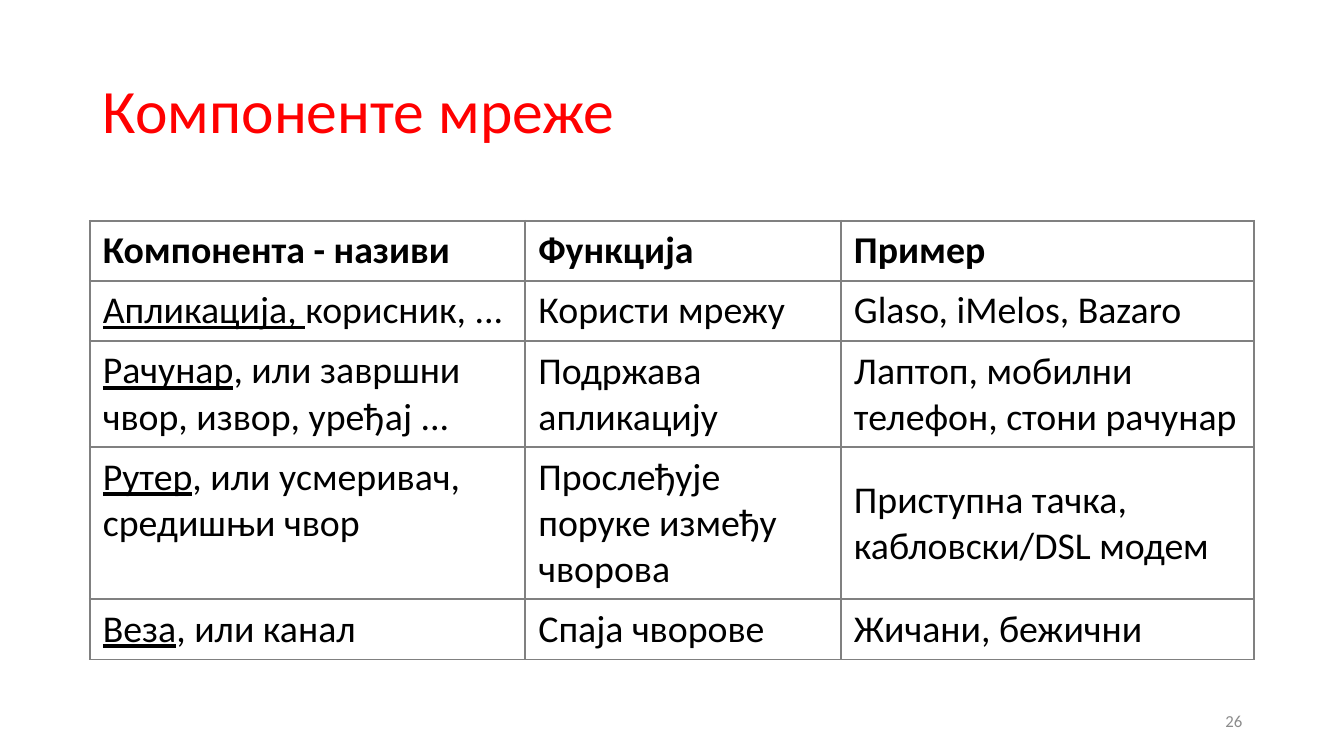
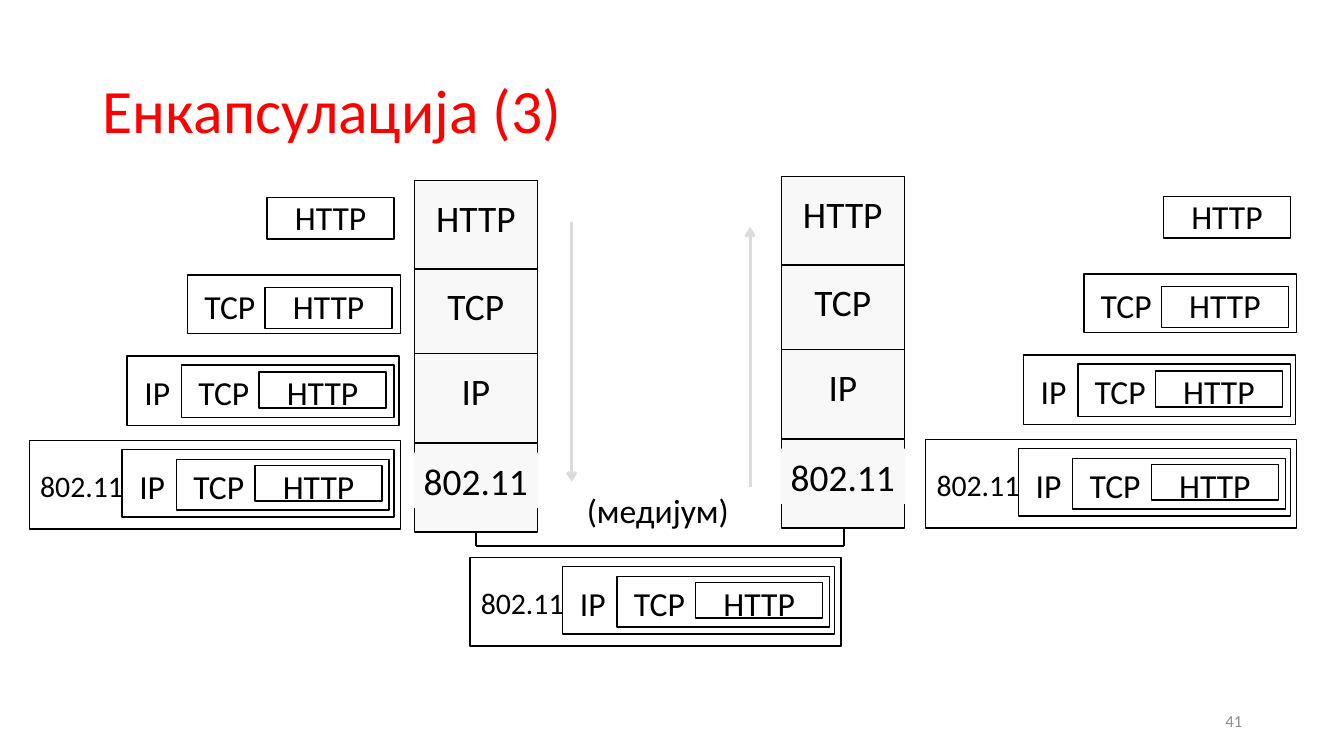
from itertools import pairwise

from lxml.etree import SubElement
from pptx import Presentation
from pptx.dml.color import RGBColor
from pptx.enum.shapes import MSO_CONNECTOR, MSO_SHAPE
from pptx.enum.text import MSO_ANCHOR, MSO_AUTO_SIZE, PP_ALIGN
from pptx.oxml.ns import qn
from pptx.util import Inches, Pt

FONT = "Calibri"
RED, BLACK, GREY = "FF0000", "000000", "8C8C8C"
BORDER, PALE, ARROW = "808080", "F8F8F8", "DBDBDB"

TABLE_TITLE, TABLE_NUMBER = "Компоненте мреже", "26"
COLUMN_WIDTHS = (4.32, 3.13, 4.1)
ROW_HEIGHTS = (0.59, 0.59, 1.05, 1.5, 0.59)
ROWS = [
    (("", "Компонента - називи"), "Функција", "Пример"),
    (("Апликација, ", "корисник, ..."), "Користи мрежу", "Glaso, iMelos, Bazaro"),
    (("Рачунар", ", или завршни чвор, извор, уређај ..."),
     "Подржава апликацију", "Лаптоп, мобилни телефон, стони рачунар"),
    (("Рутер", ", или усмеривач, средишњи чвор"),
     "Прослеђује поруке између чворова", "Приступна тачка, кабловски/DSL модем"),
    (("Веза", ", или канал"), "Спаја чворове", "Жичани, бежични"),
]
MIDDLE_ROWS = (2, 3)

LAYERS_TITLE, LAYERS_NUMBER = "Енкапсулација (3)", "41"
LAYERS = [("HTTP", 0, 1), ("TCP", 0.88, 0.77), ("IP", 1.72, 0.49), ("802.11", 2.61, 1.24)]
STACK_ORIGINS = [(4.11, 1.79), (7.75, 1.75)]
FRAMES = {
    "HTTP": (1.26, 0.63, 24),
    "TCP": (2.11, 0.42, 24),
    "IP": (2.7, 0.3, 24),
    "802.11": (3.68, 0.52, 21.3),
}
PACKETS = [
    (2.15, [("HTTP", 2.65, 1.96, 0.41)]),
    (3.04, [("TCP", 1.86, 2.73, 0.58), ("HTTP", 2.63, 2.85, 0.41)]),
    (3.89, [("IP", 1.26, 3.53, 0.69), ("TCP", 1.8, 3.62, 0.52), ("HTTP", 2.57, 3.69, 0.36)]),
    (4.82, [("802.11", 0.29, 4.37, 0.88), ("IP", 1.21, 4.46, 0.67),
            ("TCP", 1.75, 4.56, 0.5), ("HTTP", 2.53, 4.62, 0.35)]),
]
PACKET_GROUPS = [(0, 0, PACKETS), (8.89, -0.01, PACKETS), (4.37, 1.16, PACKETS[-1:])]
FLOWS = [((5.67, 2.2), (5.67, 4.78)), ((7.44, 4.83), (7.44, 2.25))]
MEDIUM = [(4.72, 5.27), (4.72, 5.42), (8.37, 5.42), (8.37, 5.23)]


def color(value):
    return RGBColor.from_string(value)


def style(span, size, shade=BLACK):
    span.font.name = FONT
    span.font.size = Pt(size)
    span.font.color.rgb = color(shade)


def write(box, text, size, shade=BLACK, align=PP_ALIGN.CENTER, wrap=False):
    frame = box.text_frame
    frame.text = text
    frame.word_wrap = wrap
    frame.auto_size = MSO_AUTO_SIZE.NONE
    frame.vertical_anchor = MSO_ANCHOR.MIDDLE
    para = frame.paragraphs[0]
    para.alignment = align
    style(para.runs[0], size, shade)
    return para


def add_text(page, text, place, size, **options):
    box = page.shapes.add_textbox(*map(Inches, place))
    write(box, text, size, **options)


def add_rectangle(page, place, fill=None, outlined=True):
    box = page.shapes.add_shape(MSO_SHAPE.RECTANGLE, *map(Inches, place))
    box.shadow.inherit = False
    if fill:
        box.fill.solid()
        box.fill.fore_color.rgb = color(fill)
    else:
        box.fill.background()
    if outlined:
        box.line.color.rgb = color(BLACK)
        box.line.width = Pt(1)
    else:
        box.line.fill.background()
    return box


def add_line(page, start, end, shade, width, arrow=False):
    line = page.shapes.add_connector(MSO_CONNECTOR.STRAIGHT, *map(Inches, start + end))
    line.line.color.rgb = color(shade)
    line.line.width = Pt(width)
    if arrow:
        SubElement(line.line._get_or_add_ln(), qn("a:tailEnd"), type="arrow")
    SubElement(line._element.spPr, qn("a:effectLst"))


def add_page(deck, title, number):
    page = deck.slides.add_slide(deck.slide_layouts[5])
    heading = page.shapes.title
    heading.left, heading.top, heading.width, heading.height = map(Inches, (0.92, 0.4, 11.5, 1.45))
    write(heading, title, 44, RED, PP_ALIGN.LEFT, True).line_spacing = 0.9
    add_text(page, number, (9.42, 6.95, 3, 0.4), 12, shade=GREY, align=PP_ALIGN.RIGHT, wrap=True)
    return page


def format_cell(cell, content, header, middle):
    underlined, rest = content if isinstance(content, tuple) else ("", content)
    para = cell.text_frame.paragraphs[0]
    for text, underline in ((underlined, True), (rest, False)):
        if text:
            span = para.add_run()
            span.text = text
            style(span, 27)
            span.font.bold = header
            span.font.underline = underline
    cell.margin_left = cell.margin_right = Inches(0.13)
    cell.margin_top = cell.margin_bottom = Inches(0.07)
    cell.vertical_anchor = MSO_ANCHOR.MIDDLE if middle else MSO_ANCHOR.TOP
    properties = cell._tc.get_or_add_tcPr()
    for side in ("lnL", "lnR", "lnT", "lnB"):
        edge = SubElement(properties, qn(f"a:{side}"), w=str(Pt(1.5)))
        SubElement(SubElement(edge, qn("a:solidFill")), qn("a:srgbClr"), val=BORDER)
    cell.fill.background()


def add_components(page):
    place = (0.89, 2.19, sum(COLUMN_WIDTHS), sum(ROW_HEIGHTS))
    table = page.shapes.add_table(len(ROWS), len(COLUMN_WIDTHS), *map(Inches, place)).table
    table.first_row = table.horz_banding = False
    for column, width in zip(table.columns, COLUMN_WIDTHS):
        column.width = Inches(width)
    for r, (height, contents) in enumerate(zip(ROW_HEIGHTS, ROWS)):
        table.rows[r].height = Inches(height)
        for c, content in enumerate(contents):
            format_cell(table.cell(r, c), content, r == 0, c > 0 and r in MIDDLE_ROWS)


def add_stack(page, left, top):
    width, height = 1.22, 0.88
    for name, offset, label_width in LAYERS:
        add_rectangle(page, (left, top + offset, width, height), PALE)
        label_left = left + (width - label_width) / 2
        label = add_rectangle(page, (label_left, top + offset + 0.09, label_width, 0.55), PALE, False)
        write(label, name, 26.7)


def add_packet(page, dx, dy, middle, frames):
    label_width, label_height = 1.2, 0.5
    for name, left, top, height in frames:
        width, label_offset, size = FRAMES[name]
        add_rectangle(page, (left + dx, top + dy, width, height))
        label_left = left + dx + label_offset - label_width / 2
        label_top = middle + dy - label_height / 2
        add_text(page, name, (label_left, label_top, label_width, label_height), size)


def main():
    deck = Presentation()
    deck.slide_width, deck.slide_height = Inches(13.33), Inches(7.5)

    add_components(add_page(deck, TABLE_TITLE, TABLE_NUMBER))

    page = add_page(deck, LAYERS_TITLE, LAYERS_NUMBER)
    for left, top in STACK_ORIGINS:
        add_stack(page, left, top)
    for dx, dy, packets in PACKET_GROUPS:
        for middle, frames in packets:
            add_packet(page, dx, dy, middle, frames)
    for start, end in FLOWS:
        add_line(page, start, end, ARROW, 2.25, True)
    for start, end in pairwise(MEDIUM):
        add_line(page, start, end, BLACK, 1.5)
    add_text(page, "(медијум)", (5.71, 4.81, 1.63, 0.5), 24)

    deck.save("out.pptx")


if __name__ == "__main__":
    main()
